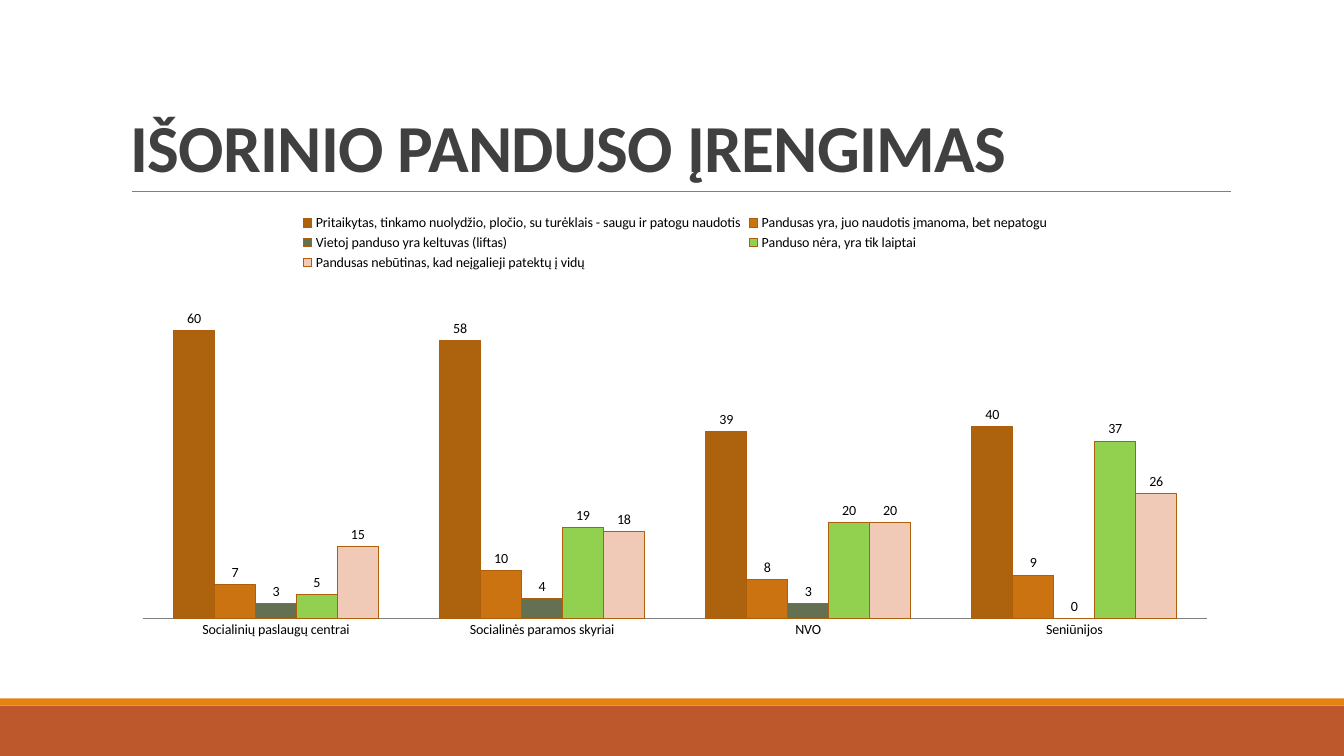
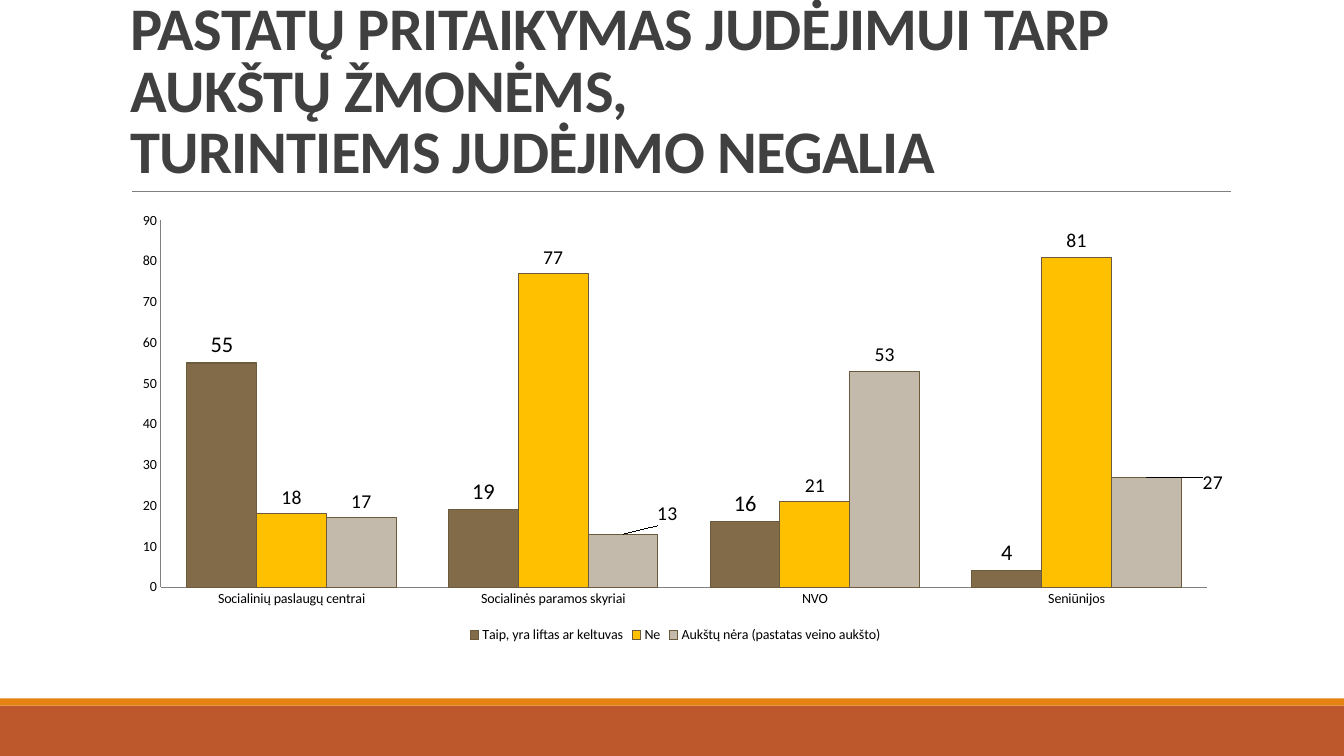
from dataclasses import dataclass, field

from pptx import Presentation
from pptx.chart.chart import Chart
from pptx.chart.data import CategoryChartData
from pptx.dml.color import RGBColor
from pptx.enum.chart import XL_CHART_TYPE, XL_LABEL_POSITION, XL_LEGEND_POSITION, XL_TICK_MARK
from pptx.enum.shapes import MSO_CONNECTOR, MSO_SHAPE
from pptx.enum.text import MSO_ANCHOR
from pptx.oxml import parse_xml
from pptx.oxml.ns import nsdecls
from pptx.slide import Slide
from pptx.util import Emu, Pt

COLUMNS = XL_CHART_TYPE.COLUMN_CLUSTERED
OUTSIDE_END = XL_LABEL_POSITION.OUTSIDE_END
LEGEND_TOP = XL_LEGEND_POSITION.TOP
LEGEND_BOTTOM = XL_LEGEND_POSITION.BOTTOM
NO_TICK = XL_TICK_MARK.NONE
RECTANGLE = MSO_SHAPE.RECTANGLE
STRAIGHT = MSO_CONNECTOR.STRAIGHT
BOTTOM = MSO_ANCHOR.BOTTOM


@dataclass(frozen=True)
class Theme:
    """Colours and type sizes of the deck."""

    font: str = "Calibri"
    title: str = "404040"
    text: str = "000000"
    rule: str = "808080"
    band: str = "BD582C"
    stripe: str = "E48312"
    ramp_outline: str = "AD5F0B"
    floor_outline: str = "6B5A3C"
    title_size: float = 48
    long_title_size: float = 43.2
    chart_size: float = 10
    label_size: float = 14
    large_label_size: float = 16


@dataclass(frozen=True)
class Area:
    """A rectangle in px."""

    left: int
    top: int
    width: int
    height: int

    def emu(self) -> tuple[Emu, Emu, Emu, Emu]:
        """Return the four lengths in EMU."""
        return px(self.left), px(self.top), px(self.width), px(self.height)


@dataclass(frozen=True)
class Series:
    """One set of columns, with shifts for moved labels by point."""

    name: str
    values: tuple[int, ...]
    color: str
    label_size: float
    label_shifts: dict[int, tuple[float, float]] = field(default_factory=dict)


@dataclass(frozen=True)
class ChartPage:
    """A title with a column chart below it."""

    title: tuple[str, ...]
    title_size: float
    series: tuple[Series, ...]
    outline: str
    legend: XL_LEGEND_POSITION
    gap: int
    maximum: int
    show_values_axis: bool


THEME = Theme()
EMU_PER_PX = 9525
PAGE = Area(0, 0, 1280, 720)
BAND = Area(0, 672, 1280, 48)
STRIPE = Area(0, 665, 1280, 7)
RULE = Area(126, 182, 1046, 0)
TITLE = Area(115, 30, 1056, 152)
CHART = Area(115, 194, 1056, 422)
CATEGORIES = ("Socialinių paslaugų centrai", "Socialinės paramos skyriai", "NVO", "Seniūnijos")

PAGES = (
    ChartPage(
        title=("IŠORINIO PANDUSO ĮRENGIMAS",),
        title_size=THEME.title_size,
        series=(
            Series("Pritaikytas, tinkamo nuolydžio, pločio, su turėklais - saugu ir patogu naudotis",
                   (60, 58, 39, 40), "AD620D", THEME.chart_size),
            Series("Pandusas yra, juo naudotis įmanoma, bet nepatogu",
                   (7, 10, 8, 9), "CB7310", THEME.chart_size),
            Series("Vietoj panduso yra keltuvas (liftas)", (3, 4, 3, 0), "637052", THEME.chart_size),
            Series("Panduso nėra, yra tik laiptai", (5, 19, 20, 37), "92D050", THEME.chart_size),
            Series("Pandusas nebūtinas, kad neįgalieji patektų į vidų",
                   (15, 18, 20, 26), "F0CAB6", THEME.chart_size),
        ),
        outline=THEME.ramp_outline,
        legend=LEGEND_TOP,
        gap=150,
        maximum=70,
        show_values_axis=False,
    ),
    ChartPage(
        title=("PASTATŲ PRITAIKYMAS JUDĖJIMUI TARP AUKŠTŲ ŽMONĖMS,", "TURINTIEMS JUDĖJIMO NEGALIA"),
        title_size=THEME.long_title_size,
        series=(
            Series("Taip, yra liftas ar keltuvas", (55, 19, 16, 4), "826B48", THEME.large_label_size),
            Series("Ne", (18, 77, 21, 81), "FFC000", THEME.label_size),
            Series("Aukštų nėra (pastatas veino aukšto)", (17, 13, 53, 27), "C4BAAB",
                   THEME.label_size, {1: (0.04, -0.01), 3: (0.06, 0.05)}),
        ),
        outline=THEME.floor_outline,
        legend=LEGEND_BOTTOM,
        gap=75,
        maximum=90,
        show_values_axis=True,
    ),
)


def px(length: int) -> Emu:
    """Turn px into EMU."""
    return Emu(length * EMU_PER_PX)


def rgb(color: str) -> RGBColor:
    """Turn a hex string into a colour."""
    return RGBColor.from_string(color)


def add_band(page: Slide, area: Area, color: str) -> None:
    """Draw a plain filled rectangle."""
    band = page.shapes.add_shape(RECTANGLE, *area.emu())
    band.shadow.inherit = False
    band.fill.solid()
    band.fill.fore_color.rgb = rgb(color)
    band.line.fill.background()


def add_rule(page: Slide, area: Area) -> None:
    """Draw the thin line below the title."""
    left, top, width, height = area.emu()
    rule = page.shapes.add_connector(STRAIGHT, left, top, left + width, top + height)
    rule.line.color.rgb = rgb(THEME.rule)
    rule.line.width = Pt(0.5)
    rule._element.spPr.append(parse_xml(f"<a:effectLst {nsdecls('a')}/>"))


def add_text(page: Slide, area: Area, lines: tuple[str, ...], *, size: float, color: str,
             bold: bool = False, line_spacing: float = 1.0, tracking: float = 0) -> None:
    """Add one bottom-anchored paragraph with a break between lines."""
    box = page.shapes.add_textbox(*area.emu())
    frame = box.text_frame
    frame.word_wrap = True
    frame.vertical_anchor = BOTTOM
    para = frame.paragraphs[0]
    para.line_spacing = line_spacing
    for index, line in enumerate(lines):
        if index:
            para.add_line_break()
        span = para.add_run()
        span.text = line
        span.font.name = THEME.font
        span.font.size = Pt(size)
        span.font.bold = bold
        span.font.color.rgb = rgb(color)
        span._r.get_or_add_rPr().set("spc", str(round(tracking * 100)))


def shift_label(chart: Chart, series_index: int, point_index: int, shift: tuple[float, float]) -> None:
    """Move one data label by fractions of the chart size."""
    across, down = shift
    marker = chart._chartSpace.xpath(
        f".//c:ser[c:idx/@val='{series_index}']/c:dLbls/c:dLbl/c:idx[@val='{point_index}']")[0]
    marker.addnext(parse_xml(
        f"<c:layout {nsdecls('c')}><c:manualLayout>"
        f"<c:x val='{across}'/><c:y val='{down}'/></c:manualLayout></c:layout>"))


def style_series(chart: Chart, content: ChartPage) -> None:
    """Colour the columns and label their values."""
    for index, (columns, series) in enumerate(zip(chart.plots[0].series, content.series)):
        columns.format.fill.solid()
        columns.format.fill.fore_color.rgb = rgb(series.color)
        columns.format.line.color.rgb = rgb(content.outline)
        columns.format.line.width = Pt(0.75)
        columns.invert_if_negative = False
        labels = columns.data_labels
        labels.show_value = True
        labels.position = OUTSIDE_END
        labels.font.size = Pt(series.label_size)
        for point, shift in series.label_shifts.items():
            label = columns.points[point].data_label
            label.font.size = Pt(series.label_size)
            label.position = OUTSIDE_END
            shift_label(chart, index, point, shift)


def add_columns(page: Slide, area: Area, content: ChartPage) -> None:
    """Add the clustered column chart."""
    data = CategoryChartData()
    data.categories = CATEGORIES
    for series in content.series:
        data.add_series(series.name, series.values)
    chart = page.shapes.add_chart(COLUMNS, *area.emu(), data).chart
    chart.has_title = False
    chart.font.name = THEME.font
    chart.font.size = Pt(THEME.chart_size)
    chart.font.color.rgb = rgb(THEME.text)
    chart.has_legend = True
    chart.legend.position = content.legend
    chart.legend.include_in_layout = False
    plot = chart.plots[0]
    plot.gap_width = content.gap
    plot.overlap = 0
    plot.vary_by_categories = False
    for axis in (chart.category_axis, chart.value_axis):
        axis.major_tick_mark = NO_TICK
        axis.minor_tick_mark = NO_TICK
        axis.has_major_gridlines = False
        axis.format.line.color.rgb = rgb(THEME.rule)
    chart.value_axis.minimum_scale = 0
    chart.value_axis.maximum_scale = content.maximum
    chart.value_axis.major_unit = 10
    chart.value_axis.visible = content.show_values_axis
    style_series(chart, content)


def add_page(deck: Presentation, content: ChartPage) -> None:
    """Build one slide with the shared frame, title and chart."""
    page = deck.slides.add_slide(deck.slide_layouts[6])
    add_band(page, BAND, THEME.band)
    add_band(page, STRIPE, THEME.stripe)
    add_rule(page, RULE)
    add_text(page, TITLE, content.title, size=content.title_size, color=THEME.title,
             bold=True, line_spacing=0.85, tracking=-0.5)
    add_columns(page, CHART, content)


def main() -> None:
    """Build and save the deck."""
    deck = Presentation()
    deck.slide_width = px(PAGE.width)
    deck.slide_height = px(PAGE.height)
    for content in PAGES:
        add_page(deck, content)
    deck.save("out.pptx")


if __name__ == "__main__":
    main()
